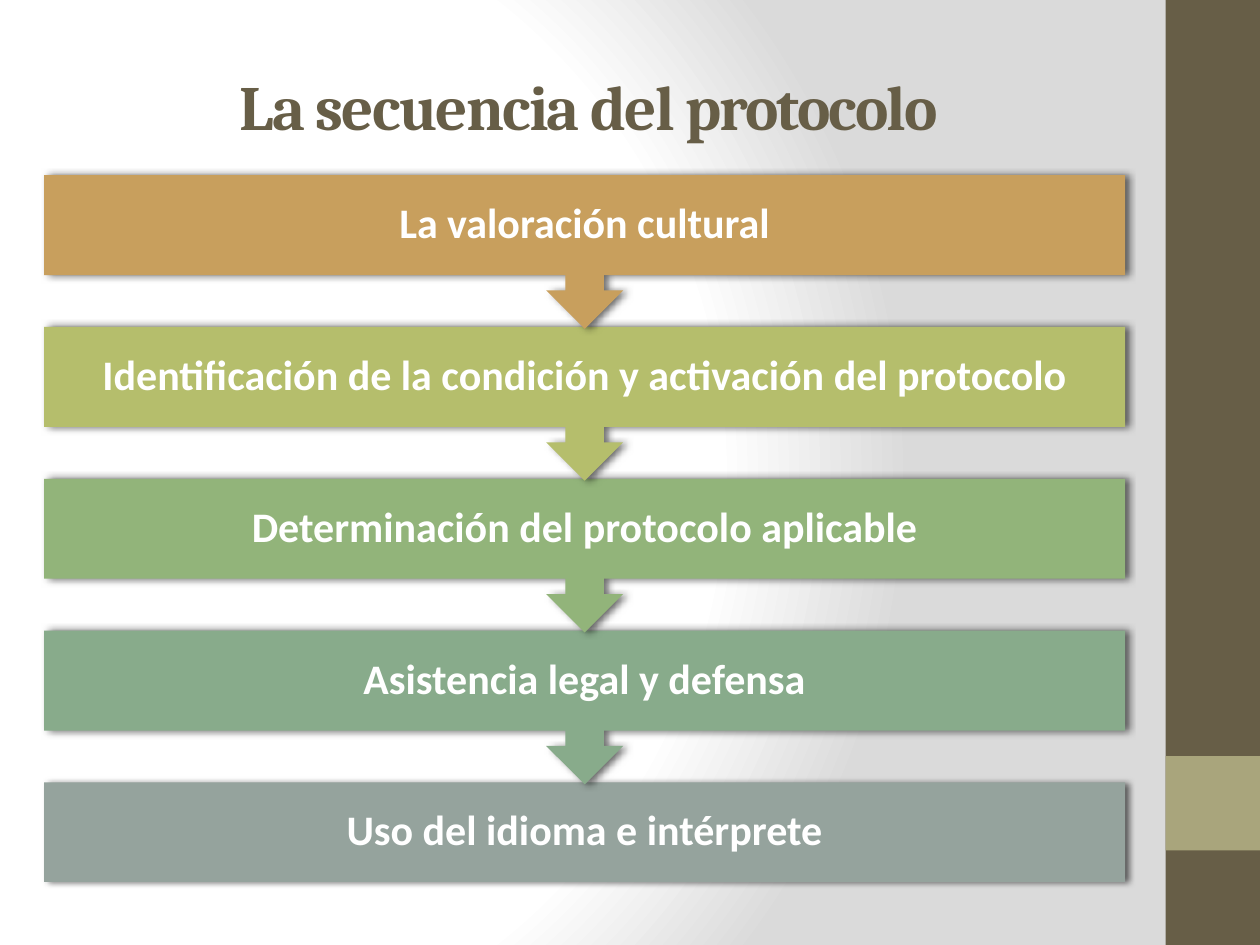
from lxml import etree
from pptx import Presentation
from pptx.dml.color import RGBColor
from pptx.enum.shapes import MSO_SHAPE
from pptx.enum.text import MSO_ANCHOR, PP_ALIGN
from pptx.oxml import parse_xml
from pptx.oxml.ns import qn
from pptx.util import Inches, Pt

RECTANGLE = MSO_SHAPE.RECTANGLE
CALLOUT = MSO_SHAPE.UP_ARROW_CALLOUT
CENTER = PP_ALIGN.CENTER
MIDDLE = MSO_ANCHOR.MIDDLE
DRAWING_NS = "http://schemas.openxmlformats.org/drawingml/2006/main"

# Content: title and steps with their colours
TITLE = "La secuencia del protocolo"
STEPS = [
    ("La valoración cultural", "C89F5D"),
    ("Identificación de la condición y activación del protocolo", "B5BE6C"),
    ("Determinación del protocolo aplicable", "92B47A"),
    ("Asistencia legal y defensa", "88AB8B"),
    ("Uso del idioma e intérprete", "95A39D"),
]

THEME = {
    "brown": "675E47", "khaki": "A9A57C", "white": "FFFFFF",
    "background": [(0, "FFFFFF"), (75, "FFFFFF"), (100, "DADADA")],
    "title_font": "Cambria", "title_size": 36,
    "step_font": "Calibri", "step_size": 24,
}

# Layout, in inches
STEP_LEFT, STEP_TOP, STEP_WIDTH = 0.35, 1.39, 8.58
BAR_HEIGHT, CALLOUT_HEIGHT, STEP_PITCH = 0.79, 1.22, 1.205
STEP_INSET = 0.19


def set_background(slide):
    fill = slide.background.fill
    fill.gradient()
    stops = "".join(
        f'<a:gs pos="{position * 1000}"><a:srgbClr val="{color}"/></a:gs>'
        for position, color in THEME["background"])
    gradient = parse_xml(
        f'<a:gradFill xmlns:a="{DRAWING_NS}" rotWithShape="1"><a:gsLst>{stops}</a:gsLst>'
        '<a:path path="circle"><a:fillToRect l="20000" t="50000" r="100000" b="50000"/>'
        '</a:path></a:gradFill>')
    old = slide.background._cSld.find(".//" + qn("a:gradFill"))
    old.getparent().replace(old, gradient)


def add_block(slide, kind, left, top, width, height, color):
    shape = slide.shapes.add_shape(
        kind, Inches(left), Inches(top), Inches(width), Inches(height))
    shape.shadow.inherit = False
    shape.fill.solid()
    shape.fill.fore_color.rgb = RGBColor.from_string(color)
    shape.line.fill.background()
    return shape


def add_shadow(shape):
    effects = shape._element.spPr.find(qn("a:effectLst"))
    shadow = etree.SubElement(
        effects, qn("a:outerShdw"), blurRad=str(Pt(4)), dist=str(Pt(2)),
        dir="0", rotWithShape="0")
    color = etree.SubElement(shadow, qn("a:srgbClr"), val="000000")
    etree.SubElement(color, qn("a:alpha"), val="60000")


def add_text(slide, text, left, top, width, height, font, size, color, inset):
    box = slide.shapes.add_textbox(
        Inches(left), Inches(top), Inches(width), Inches(height))
    frame = box.text_frame
    frame.text = text
    frame.word_wrap = True
    frame.vertical_anchor = MIDDLE
    frame.margin_left = frame.margin_right = Inches(inset)
    frame.margin_top = frame.margin_bottom = Inches(inset)
    paragraph = frame.paragraphs[0]
    paragraph.alignment = CENTER
    run = paragraph.runs[0]
    run.font.name, run.font.size, run.font.bold = font, Pt(size), True
    run.font.color.rgb = RGBColor.from_string(color)
    return paragraph


presentation = Presentation()
presentation.slide_width, presentation.slide_height = Inches(10), Inches(7.5)
slide = presentation.slides.add_slide(presentation.slide_layouts[6])
set_background(slide)

# Side band
add_block(slide, RECTANGLE, 9.25, 0, 0.75, 7.5, THEME["brown"])
add_block(slide, RECTANGLE, 9.25, 6, 0.75, 0.75, THEME["khaki"])

# Title
title = add_text(slide, TITLE, 0.51, 0.21, 8.33, 1.25, THEME["title_font"],
                 THEME["title_size"], THEME["brown"], 0.05)
title.runs[0].font._element.set("spc", "-100")

# Steps, from the last up, so that each arrow lies over the next bar
for index, (text, color) in reversed(list(enumerate(STEPS))):
    top = STEP_TOP + index * STEP_PITCH
    is_last = index == len(STEPS) - 1
    kind, height = (RECTANGLE, BAR_HEIGHT) if is_last else (CALLOUT, CALLOUT_HEIGHT)
    step = add_block(slide, kind, STEP_LEFT, top, STEP_WIDTH, height, color)
    step.rotation = 0 if is_last else 180
    add_shadow(step)
    label = add_text(slide, text, STEP_LEFT, top, STEP_WIDTH, BAR_HEIGHT,
                     THEME["step_font"], THEME["step_size"], THEME["white"], STEP_INSET)
    label.line_spacing = 0.9

presentation.save("out.pptx")
